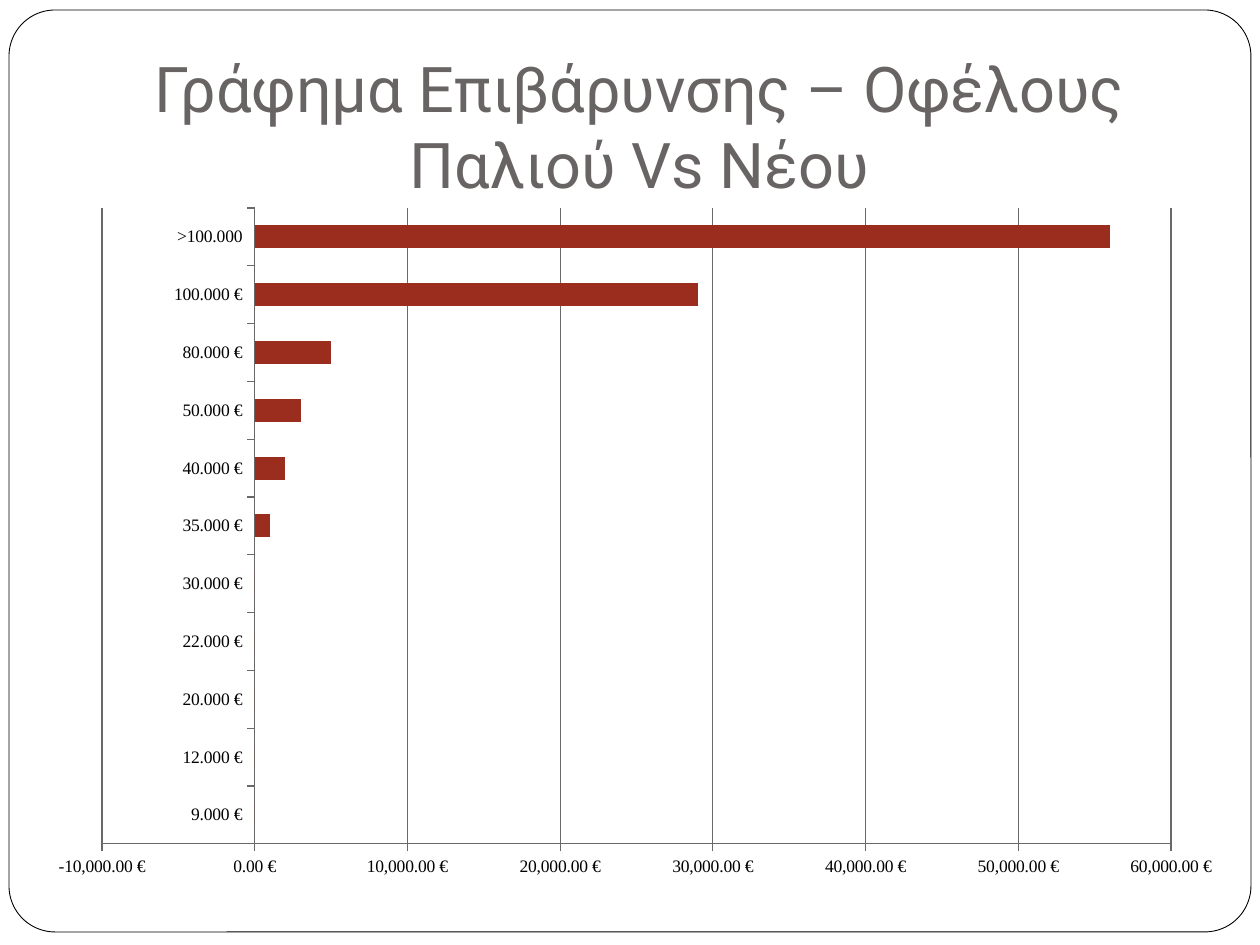
from dataclasses import dataclass

from lxml import etree
from pptx import Presentation
from pptx.chart.data import CategoryChartData
from pptx.dml.color import RGBColor
from pptx.enum.chart import XL_CHART_TYPE, XL_TICK_LABEL_POSITION, XL_TICK_MARK
from pptx.enum.shapes import MSO_SHAPE
from pptx.enum.text import MSO_ANCHOR, MSO_AUTO_SIZE, PP_ALIGN
from pptx.util import Pt

BAR = XL_CHART_TYPE.BAR_CLUSTERED
NEXT_TO_AXIS = XL_TICK_LABEL_POSITION.NEXT_TO_AXIS
OUTSIDE, NO_TICK = XL_TICK_MARK.OUTSIDE, XL_TICK_MARK.NONE
ROUND_RECT = MSO_SHAPE.ROUNDED_RECTANGLE
BOTTOM, CENTER = MSO_ANCHOR.BOTTOM, PP_ALIGN.CENTER
NO_AUTOFIT = MSO_AUTO_SIZE.NONE

PX_PER_INCH = 126
TITLE_ONLY = 5
EURO_FORMAT = '#,##0.00\\ "€"'


def px(n: int) -> int:
    return round(n * 914400 / PX_PER_INCH)


@dataclass(frozen=True)
class Box:
    x: int
    y: int
    w: int
    h: int

    def emu(self) -> tuple:
        return px(self.x), px(self.y), px(self.w), px(self.h)


@dataclass(frozen=True)
class Theme:
    paper: RGBColor = RGBColor(0xFF, 0xFF, 0xFF)
    ink: RGBColor = RGBColor(0, 0, 0)
    title: RGBColor = RGBColor(0x69, 0x64, 0x64)
    grid: RGBColor = RGBColor(0x69, 0x69, 0x69)
    bar: RGBColor = RGBColor(0x9B, 0x2D, 0x1F)
    title_font: str = "Roboto"
    chart_font: str = "Times New Roman"
    title_size: int = 36
    chart_size: int = 10


@dataclass(frozen=True)
class Bracket:
    income: str
    change: int


THEME = Theme()
FRAME = Box(9, 10, 1242, 922)
TITLE = Box(104, 56, 1071, 158)
CHART = Box(35, 195, 1201, 694)
PLOT = Box(102, 208, 1069, 636)

BRACKETS = [
    Bracket("9.000 €", 0),
    Bracket("12.000 €", 0),
    Bracket("20.000 €", 0),
    Bracket("22.000 €", 0),
    Bracket("30.000 €", 0),
    Bracket("35.000 €", 1000),
    Bracket("40.000 €", 2000),
    Bracket("50.000 €", 3000),
    Bracket("80.000 €", 5000),
    Bracket("100.000 €", 29000),
    Bracket(">100.000", 56000),
]


def add_frame(slide, box: Box) -> None:
    sp = slide.shapes.add_shape(ROUND_RECT, *box.emu())
    sp.adjustments[0] = 0.05
    sp.shadow.inherit = False
    sp.fill.solid()
    sp.fill.fore_color.rgb = THEME.paper
    sp.line.color.rgb = THEME.ink
    sp.line.width = Pt(0.5)
    # Behind the title placeholder
    slide.shapes.title.element.addprevious(sp.element)


def set_title(slide, box: Box, text: str) -> None:
    sp = slide.shapes.title
    sp.left, sp.top, sp.width, sp.height = box.emu()
    tf = sp.text_frame
    tf.word_wrap = True
    tf.auto_size = NO_AUTOFIT
    tf.vertical_anchor = BOTTOM
    tf.margin_left = tf.margin_right = tf.margin_bottom = px(13)
    tf.margin_top = px(6)
    p = tf.paragraphs[0]
    p.text = text
    p.alignment = CENTER
    for r in p.runs:
        r.font.name = THEME.title_font
        r.font.size = Pt(THEME.title_size)
        r.font.color.rgb = THEME.title


def style_line(line) -> None:
    line.color.rgb = THEME.grid
    line.width = Pt(0.75)


def place_plot(chart, plot: Box, outer: Box) -> None:
    """Fix the inner plot area as fractions of the chart."""
    area = chart.plots[0]._element.getparent()
    ns = etree.QName(area).namespace
    for old in area.findall(f"{{{ns}}}layout"):
        area.remove(old)
    layout = etree.Element(f"{{{ns}}}layout")
    manual = etree.SubElement(layout, f"{{{ns}}}manualLayout")
    settings = {
        "layoutTarget": "inner",
        "xMode": "edge",
        "yMode": "edge",
        "x": round((plot.x - outer.x) / outer.w, 4),
        "y": round((plot.y - outer.y) / outer.h, 4),
        "w": round(plot.w / outer.w, 4),
        "h": round(plot.h / outer.h, 4),
    }
    for name, value in settings.items():
        etree.SubElement(manual, f"{{{ns}}}{name}").set("val", str(value))
    area.insert(0, layout)


def add_bar_chart(slide, box: Box, brackets: list[Bracket]) -> None:
    data = CategoryChartData(number_format=EURO_FORMAT)
    data.categories = [b.income for b in brackets]
    data.add_series("Series 1", [b.change for b in brackets])
    chart = slide.shapes.add_chart(BAR, *box.emu(), data).chart
    chart.has_legend = False
    chart.has_title = False
    chart.font.name = THEME.chart_font
    chart.font.size = Pt(THEME.chart_size)
    chart.font.color.rgb = THEME.ink

    # Bars
    plot = chart.plots[0]
    plot.gap_width = 150
    plot.vary_by_categories = False
    series = plot.series[0]
    series.invert_if_negative = False
    series.format.fill.solid()
    series.format.fill.fore_color.rgb = THEME.bar

    # Axes
    for axis in (chart.category_axis, chart.value_axis):
        axis.major_tick_mark = OUTSIDE
        axis.minor_tick_mark = NO_TICK
        axis.tick_label_position = NEXT_TO_AXIS
        style_line(axis.format.line)
    values = chart.value_axis
    values.minimum_scale, values.maximum_scale = -10000, 60000
    values.major_unit = 10000
    values.has_major_gridlines = True
    style_line(values.major_gridlines.format.line)
    values.tick_labels.number_format = EURO_FORMAT
    values.tick_labels.number_format_is_linked = False
    place_plot(chart, PLOT, box)


def main() -> None:
    prs = Presentation()
    prs.slide_width, prs.slide_height = px(1260), px(945)
    slide = prs.slides.add_slide(prs.slide_layouts[TITLE_ONLY])
    add_frame(slide, FRAME)
    set_title(slide, TITLE, "Γράφημα Επιβάρυνσης – Οφέλους\vΠαλιού Vs Νέου")
    add_bar_chart(slide, CHART, BRACKETS)
    prs.save("out.pptx")


if __name__ == "__main__":
    main()
